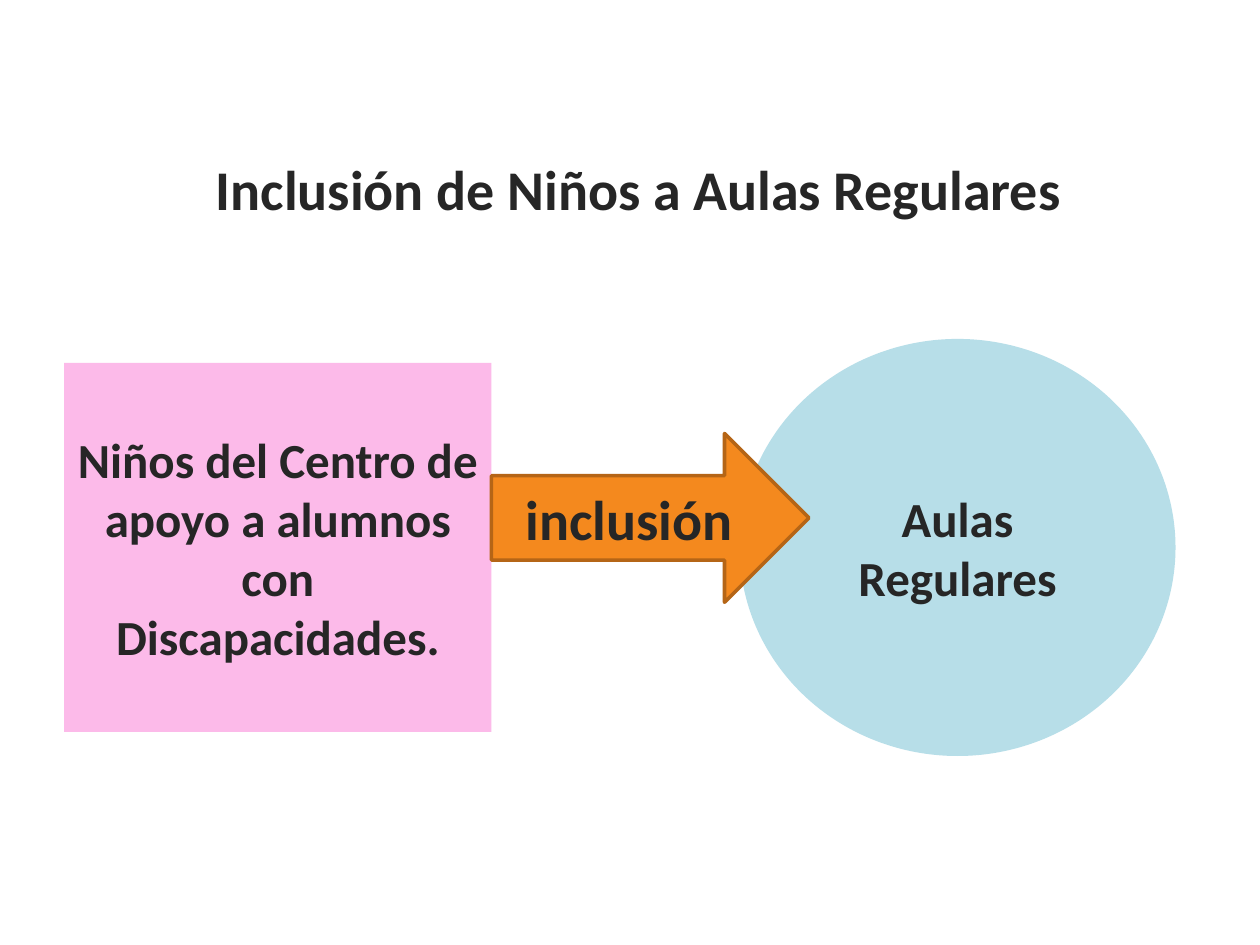
from dataclasses import dataclass
from typing import Optional

from pptx import Presentation
from pptx.dml.color import RGBColor
from pptx.enum.shapes import MSO_SHAPE
from pptx.enum.text import MSO_ANCHOR, MSO_AUTO_SIZE, PP_ALIGN
from pptx.slide import Slide
from pptx.text.text import TextFrame
from pptx.util import Inches, Pt


@dataclass(frozen=True)
class Theme:
    font: str = "Calibri"
    ink: str = "262626"
    pink: str = "FCBAE9"
    blue: str = "B7DEE8"
    orange: str = "F4891E"
    edge: str = "B56516"
    large: int = 32
    medium: int = 28


@dataclass(frozen=True)
class Box:
    left: float
    top: float
    width: float
    height: float


@dataclass(frozen=True)
class Block:
    kind: MSO_SHAPE
    box: Box
    text: str
    size: int
    fill: str
    line: Optional[str] = None


THEME = Theme()
TITLE_BOX = Box(1.25, 1.17, 7.64, 0.64)
BLOCKS = (
    Block(MSO_SHAPE.RECTANGLE, Box(0.51, 2.88, 3.39, 2.93),
          "Niños del Centro de apoyo a alumnos con Discapacidades.",
          THEME.medium, THEME.pink),
    Block(MSO_SHAPE.OVAL, Box(5.87, 2.69, 3.46, 3.31),
          "Aulas Regulares", THEME.medium, THEME.blue),
    Block(MSO_SHAPE.RIGHT_ARROW, Box(3.9, 3.44, 2.52, 1.34),
          "inclusión", THEME.large, THEME.orange, THEME.edge),
)


def write_text(tf: TextFrame, text: str, *, size: int) -> None:
    tf.word_wrap = True
    tf.auto_size = MSO_AUTO_SIZE.NONE
    tf.vertical_anchor = MSO_ANCHOR.MIDDLE
    p = tf.paragraphs[0]
    p.alignment = PP_ALIGN.CENTER
    r = p.add_run()
    r.text = text
    r.font.name = THEME.font
    r.font.size = Pt(size)
    r.font.bold = True
    r.font.color.rgb = RGBColor.from_string(THEME.ink)


def draw_title(s: Slide, text: str, box: Box) -> None:
    sp = s.shapes.title
    sp.left, sp.top = Inches(box.left), Inches(box.top)
    sp.width, sp.height = Inches(box.width), Inches(box.height)
    write_text(sp.text_frame, text, size=THEME.large)


def draw_block(s: Slide, block: Block) -> None:
    box = block.box
    sp = s.shapes.add_shape(block.kind, Inches(box.left), Inches(box.top),
                            Inches(box.width), Inches(box.height))
    sp.shadow.inherit = False
    sp.fill.solid()
    sp.fill.fore_color.rgb = RGBColor.from_string(block.fill)
    if block.line:
        sp.line.color.rgb = RGBColor.from_string(block.line)
        sp.line.width = Pt(2)
    else:
        sp.line.fill.background()
    write_text(sp.text_frame, block.text, size=block.size)


def main() -> None:
    prs = Presentation()
    prs.slide_width, prs.slide_height = Inches(10), Inches(7.5)
    s = prs.slides.add_slide(prs.slide_layouts.get_by_name("Title Only"))
    draw_title(s, "Inclusión de Niños a Aulas Regulares", TITLE_BOX)
    for block in BLOCKS:
        draw_block(s, block)
    prs.save("out.pptx")


if __name__ == "__main__":
    main()
